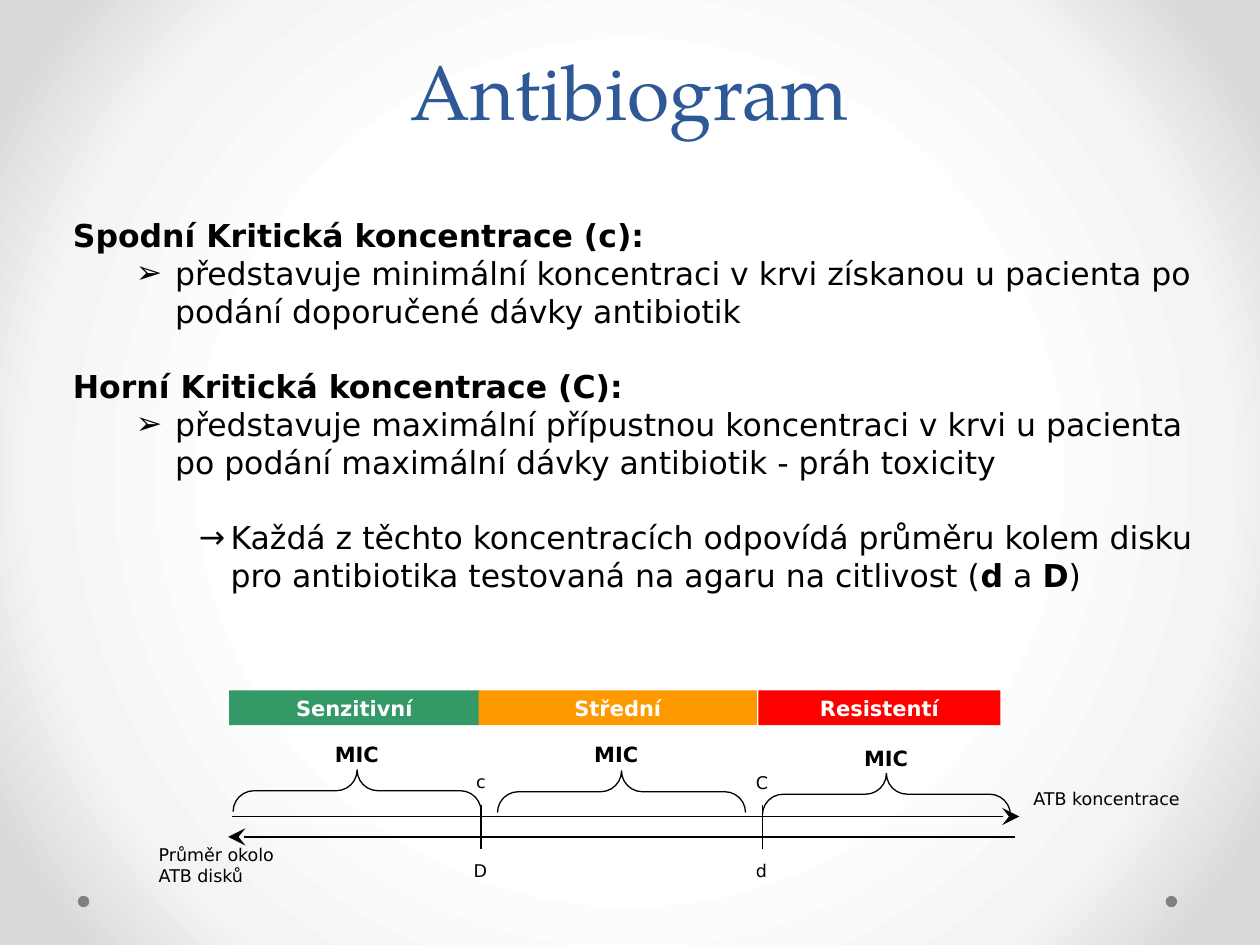
from lxml.etree import SubElement
from pptx import Presentation
from pptx.dml.color import RGBColor
from pptx.enum.shapes import MSO_CONNECTOR as CONN, MSO_SHAPE as SHAPE
from pptx.enum.text import MSO_ANCHOR as ANCHOR, PP_ALIGN as ALIGN
from pptx.oxml import parse_xml
from pptx.oxml.ns import nsdecls, qn
from pptx.util import Cm, Pt

BLACK = RGBColor(0x00, 0x00, 0x00)
WHITE = RGBColor(0xFF, 0xFF, 0xFF)
BLUE = RGBColor(0x2F, 0x58, 0x97)
GRAY = RGBColor(0x80, 0x80, 0x80)
GREEN = RGBColor(0x33, 0x99, 0x66)
ORANGE = RGBColor(0xFF, 0x99, 0x00)
RED = RGBColor(0xFF, 0x00, 0x00)
SANS = "DejaVu Sans"
SERIF = "TeX Gyre Pagella"
BACKDROP = ((50, "FFFFFF"), (76, "F4F4F4"), (92, "DADADA"))


def set_background(s):
    stops = "".join(
        f'<a:gs pos="{pos * 1000}"><a:srgbClr val="{color}"/></a:gs>'
        for pos, color in BACKDROP
    )
    bg = parse_xml(
        f'<p:bg {nsdecls("p", "a")}><p:bgPr><a:gradFill rotWithShape="1">'
        f'<a:gsLst>{stops}</a:gsLst><a:path path="circle">'
        '<a:fillToRect l="50000" t="50000" r="50000" b="50000"/></a:path>'
        '</a:gradFill><a:effectLst/></p:bgPr></p:bg>'
    )
    s.element.cSld.insert(0, bg)


def add_run(p, text, size, bold=False, color=BLACK, font=SANS):
    r = p.add_run()
    r.text = text
    r.font.name = font
    r.font.size = Pt(size)
    r.font.bold = bold
    r.font.color.rgb = color


def add_title(s, text):
    sp = s.shapes.title
    sp.left, sp.top, sp.width, sp.height = Cm(1.27), Cm(0.76), Cm(22.86), Cm(3.18)
    tf = sp.text_frame
    tf.vertical_anchor = ANCHOR.TOP
    p = tf.paragraphs[0]
    p.alignment = ALIGN.CENTER
    add_run(p, text, 44, color=BLUE, font=SERIF)


def add_text(s, x, y, w, h, lines, size, bold=False, align=ALIGN.LEFT):
    tf = s.shapes.add_textbox(Cm(x), Cm(y), Cm(w), Cm(h)).text_frame
    tf.word_wrap = True
    for i, line in enumerate(lines):
        p = tf.add_paragraph() if i else tf.paragraphs[0]
        p.alignment = align
        add_run(p, line, size, bold)


def set_bullet(p, char, level, margin, hang):
    p.level = level
    pPr = p._p.get_or_add_pPr()
    pPr.set("marL", str(Cm(margin)))
    pPr.set("indent", str(-Cm(hang)))
    SubElement(pPr, qn("a:buFont"), typeface=SANS)
    SubElement(pPr, qn("a:buChar"), char=char)


def add_body(s):
    tf = s.shapes.add_textbox(Cm(1.22), Cm(4.24), Cm(23.19), Cm(8.56)).text_frame
    tf.word_wrap = True
    definitions = (
        ("Spodní Kritická koncentrace (c):",
         "představuje minimální koncentraci v krvi získanou u pacienta po "
         "podání doporučené dávky antibiotik"),
        ("Horní Kritická koncentrace (C):",
         "představuje maximální přípustnou koncentraci v krvi u pacienta "
         "po podání maximální dávky antibiotik - práh toxicity"),
    )
    for i, (term, meaning) in enumerate(definitions):
        p = tf.add_paragraph() if i else tf.paragraphs[0]
        if i:
            p.space_before = Pt(21.5)
        add_run(p, term, 18, True)
        p = tf.add_paragraph()
        set_bullet(p, "➢", 1, 2.06, 0.79)
        add_run(p, meaning, 18)
    p = tf.add_paragraph()
    p.space_before = Pt(21.5)
    set_bullet(p, "→", 2, 3.18, 0.64)
    add_run(p, "Každá z těchto koncentracích odpovídá průměru kolem disku "
               "pro antibiotika testovaná na agaru na citlivost (", 18)
    for text, bold in (("d", True), (" a ", False), ("D", True), (")", False)):
        add_run(p, text, 18, bold)


def add_filled(s, kind, x, y, w, h, color):
    sp = s.shapes.add_shape(kind, Cm(x), Cm(y), Cm(w), Cm(h))
    sp.shadow.inherit = False
    sp.fill.solid()
    sp.fill.fore_color.rgb = color
    sp.line.fill.background()
    return sp


def add_band(s, x, w, text, color):
    tf = add_filled(s, SHAPE.RECTANGLE, x, 13.92, w, 0.7, color).text_frame
    tf.vertical_anchor = ANCHOR.MIDDLE
    p = tf.paragraphs[0]
    p.alignment = ALIGN.CENTER
    add_run(p, text, 12, True, WHITE)


def add_brace(s, cx, cy):
    w, h = 0.84, 5
    sp = s.shapes.add_shape(
        SHAPE.RIGHT_BRACE, Cm(cx - w / 2), Cm(cy - h / 2), Cm(w), Cm(h))
    sp.rotation = 270
    sp.adjustments[0] = 0.5
    sp.adjustments[1] = 0.5
    sp.shadow.inherit = False
    sp.fill.background()
    sp.line.color.rgb = BLACK
    sp.line.width = Pt(0.75)


def add_line(s, x1, y1, x2, y2, width, arrow=False):
    c = s.shapes.add_connector(CONN.STRAIGHT, Cm(x1), Cm(y1), Cm(x2), Cm(y2))
    c.line.color.rgb = BLACK
    c.line.width = Pt(width)
    spPr = c._element.spPr
    if arrow:
        SubElement(spPr.find(qn("a:ln")), qn("a:tailEnd"),
                   type="stealth", w="lg", len="lg")
    SubElement(spPr, qn("a:effectLst"))


def add_scale(s):
    for x, w, text, color in ((4.62, 5.05, "Senzitivní", GREEN),
                              (9.65, 5.61, "Střední", ORANGE),
                              (15.29, 4.88, "Resistentí", RED)):
        add_band(s, x, w, text, color)
    for x, y, cx, cy in ((6.5, 14.83, 7.2, 15.94),
                         (11.73, 14.83, 12.53, 15.96),
                         (17.17, 14.91, 17.87, 16.01)):
        add_text(s, x, y, 4.24, 1.22, ["MIC"], 12, True)
        add_brace(s, cx, cy)
    add_line(s, 4.67, 16.46, 20.55, 16.46, 1, True)
    add_line(s, 20.47, 16.87, 4.6, 16.87, 1, True)
    add_text(s, 19.99, 15.77, 4.04, 1.22, ["ATB koncentrace"], 10, align=ALIGN.RIGHT)
    add_text(s, 2.95, 16.89, 4.24, 1.22, ["Průměr okolo", "ATB disků"], 10)
    for x in (9.7, 15.37):
        for y in (16.23, 16.67):
            add_line(s, x, y, x, y + 0.45, 0.75)
    for x, y, text in ((9.35, 15.42, "c"), (9.3, 17.22, "D"),
                       (14.99, 15.44, "C"), (14.99, 17.22, "d")):
        add_text(s, x, y, 0.89, 0.7, [text], 10)


def main():
    prs = Presentation()
    prs.slide_width, prs.slide_height = Cm(25.4), Cm(19.05)
    s = prs.slides.add_slide(prs.slide_layouts[5])
    set_background(s)
    for x in (1.57, 23.5):
        add_filled(s, SHAPE.OVAL, x, 18.06, 0.23, 0.23, GRAY)
    add_title(s, "Antibiogram")
    add_body(s)
    add_scale(s)
    prs.save("out.pptx")


if __name__ == "__main__":
    main()
